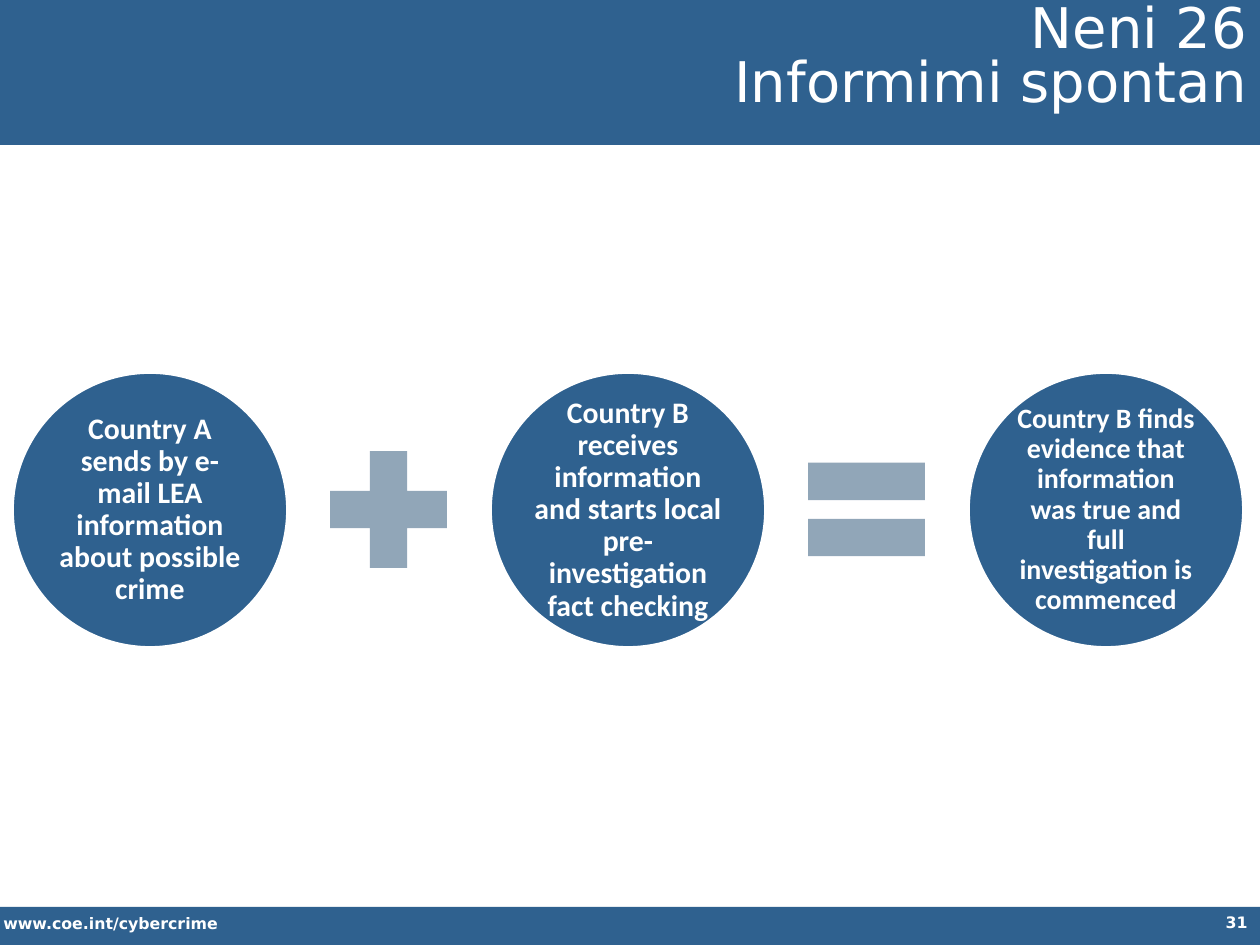
from pptx import Presentation
from pptx.dml.color import RGBColor
from pptx.enum.shapes import MSO_SHAPE
from pptx.enum.text import MSO_ANCHOR, MSO_AUTO_SIZE, PP_ALIGN
from pptx.util import Emu, Pt

PX = 914400 // 126
BLUE, GREY, WHITE = "2F618F", "91A6B8", "FFFFFF"


def color(hex_code):
    return RGBColor.from_string(hex_code)


class SlideBuilder:
    heading_font = "DejaVu Sans"
    body_font = "Calibri"

    def __init__(self, prs):
        self.slide = prs.slides.add_slide(prs.slide_layouts[5])

    def set_text(self, tf, text, size, font, align, bold=False, spacing=None):
        tf.word_wrap = True
        tf.text = text
        for p in tf.paragraphs:
            p.alignment = align
            p.line_spacing = spacing
            for r in p.runs:
                r.font.size = Pt(size)
                r.font.name = font
                r.font.bold = bold
                r.font.color.rgb = color(WHITE)

    def shape(self, kind, x, y, w, h, fill, line=None):
        sp = self.slide.shapes.add_shape(kind, *(Emu(v * PX) for v in (x, y, w, h)))
        sp.shadow.inherit = False
        sp.fill.solid()
        sp.fill.fore_color.rgb = color(fill)
        if line:
            sp.line.color.rgb = color(line)
            sp.line.width = Pt(1)
        else:
            sp.line.fill.background()
        return sp

    def circle(self, x, y, d, text, size):
        tf = self.shape(MSO_SHAPE.OVAL, x, y, d, d, BLUE, WHITE).text_frame
        tf.margin_left = tf.margin_right = tf.margin_top = tf.margin_bottom = Emu(3 * PX)
        tf.vertical_anchor = MSO_ANCHOR.MIDDLE
        self.set_text(tf, text, size, self.body_font, PP_ALIGN.CENTER, True, 0.9)

    def label(self, x, y, w, h, text, align):
        sp = self.slide.shapes.add_textbox(*(Emu(v * PX) for v in (x, y, w, h)))
        self.set_text(sp.text_frame, text, 9, self.heading_font, align, True)

    def title(self, x, y, w, h, text):
        sp = self.slide.shapes.title
        sp.left, sp.top, sp.width, sp.height = (Emu(v * PX) for v in (x, y, w, h))
        sp.fill.solid()
        sp.fill.fore_color.rgb = color(BLUE)
        tf = sp.text_frame
        tf.auto_size = MSO_AUTO_SIZE.NONE
        tf.vertical_anchor = MSO_ANCHOR.MIDDLE
        self.set_text(tf, text, 32, self.heading_font, PP_ALIGN.RIGHT, spacing=0.8)
        for p in tf.paragraphs:
            p.space_before = Pt(0)
        # Bring the title in front of the header bar
        self.slide.shapes.element.append(sp.element)


def main():
    prs = Presentation()
    prs.slide_width, prs.slide_height = Emu(1260 * PX), Emu(945 * PX)
    s = SlideBuilder(prs)

    # Header and footer bars
    s.shape(MSO_SHAPE.RECTANGLE, 0, -4, 1260, 149, BLUE)
    s.shape(MSO_SHAPE.RECTANGLE, 0, 907, 1260, 40, BLUE)
    s.label(-9, 908, 444, 32, "www.coe.int/cybercrime", PP_ALIGN.LEFT)

    # Equation: circle + circle = circle
    pitch = 478
    steps = [
        ("Country A sends by e-mail LEA information about possible crime", 17),
        ("Country B receives information and starts local "
         "pre-investigation fact checking", 17),
        ("Country B finds evidence that information was true and "
         "full investigation is commenced", 16),
    ]
    for i, (text, size) in enumerate(steps):
        s.circle(13 + i * pitch, 373, 274, text, size)
    for i, sign in enumerate((MSO_SHAPE.MATH_PLUS, MSO_SHAPE.MATH_EQUAL)):
        s.shape(sign, 309 + i * pitch, 430, 159, 159, GREY)

    # Title and slide number
    s.title(345, -4, 915, 127, "Neni 26\nInformimi spontan")
    s.label(966, 907, 294, 38, "31", PP_ALIGN.RIGHT)

    prs.save("out.pptx")


if __name__ == "__main__":
    main()
